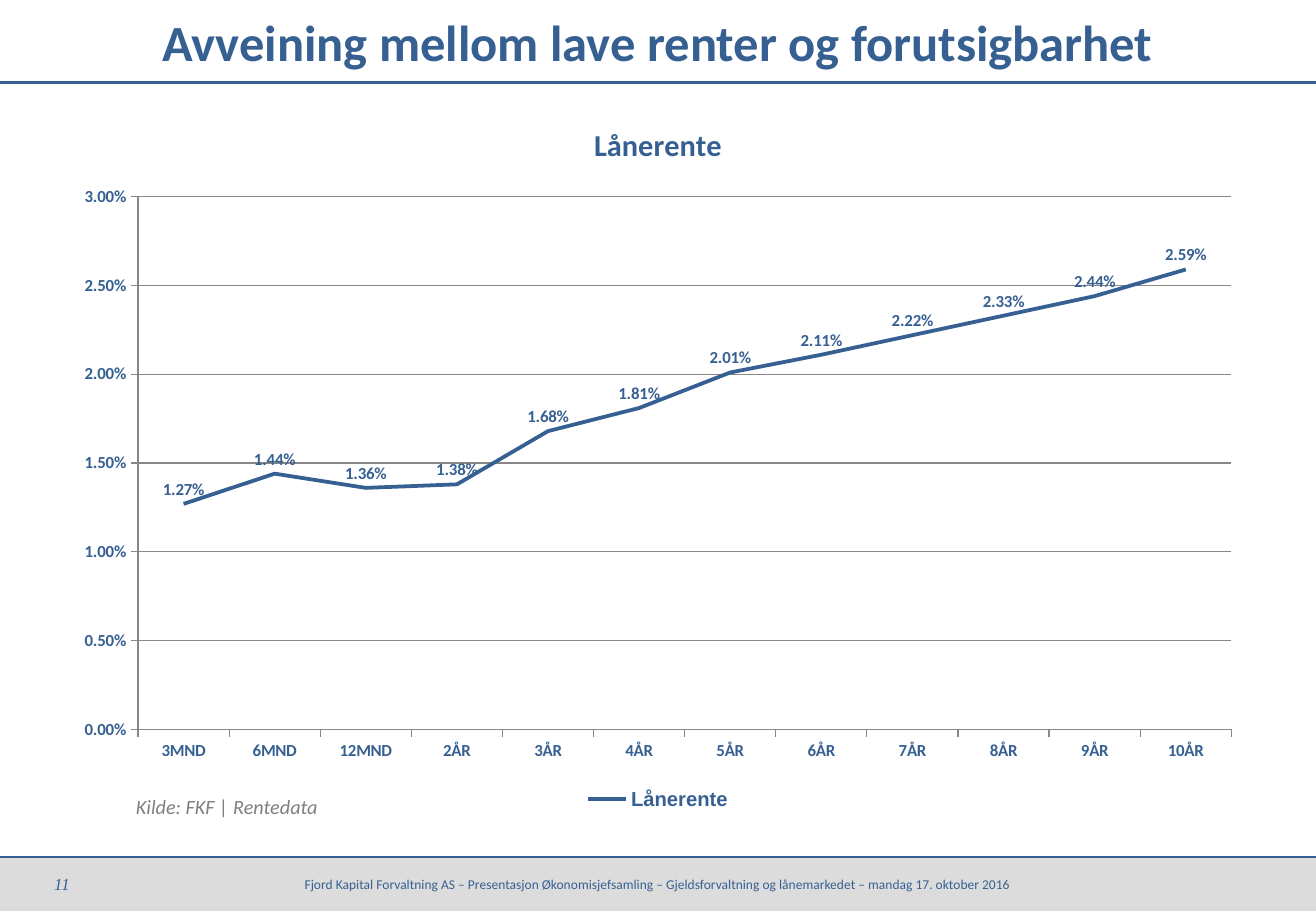
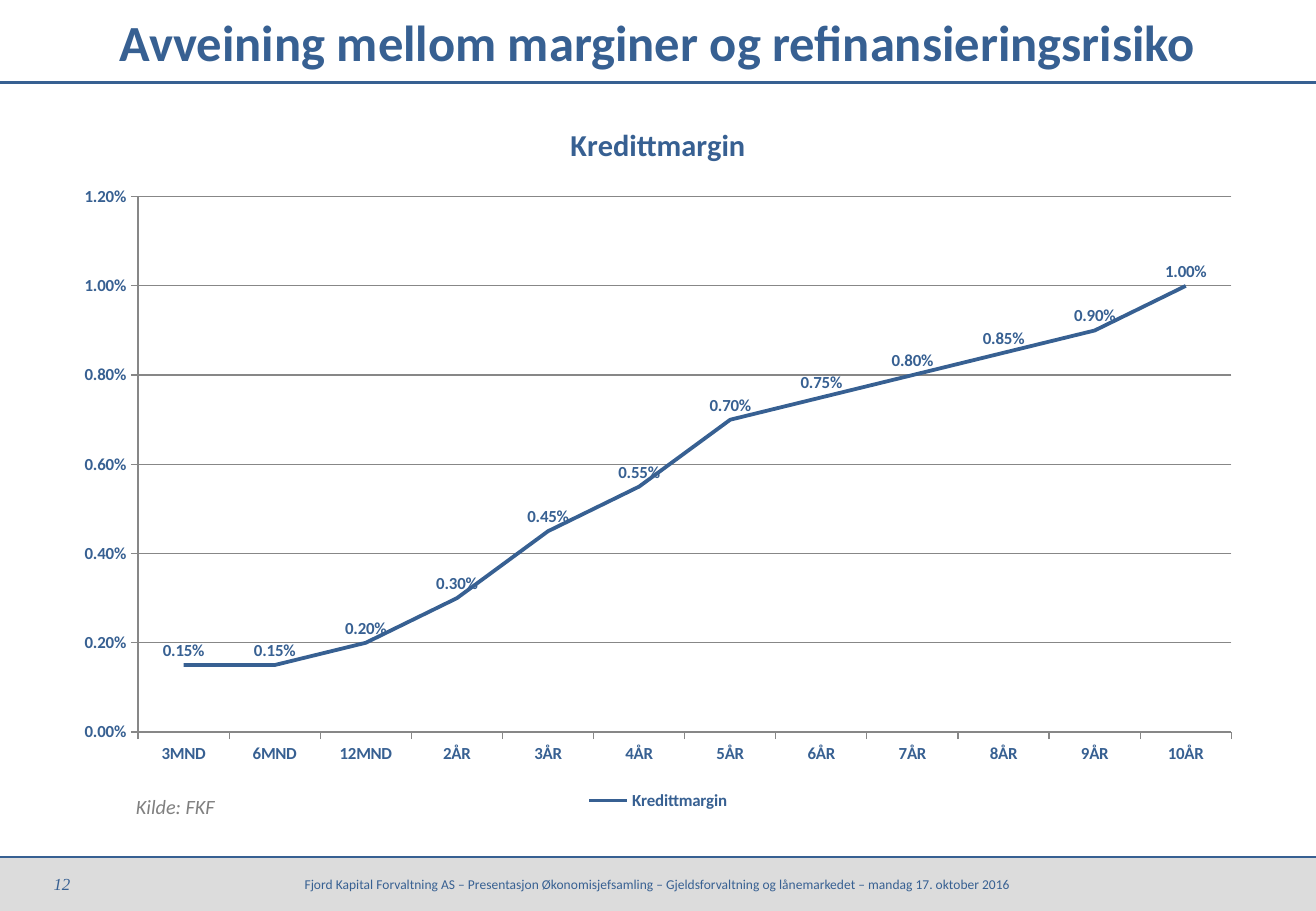
from lxml.etree import SubElement
from pptx import Presentation
from pptx.chart.data import CategoryChartData
from pptx.dml.color import RGBColor
from pptx.enum.chart import (XL_CHART_TYPE, XL_LABEL_POSITION, XL_LEGEND_POSITION,
                             XL_MARKER_STYLE, XL_TICK_LABEL_POSITION, XL_TICK_MARK)
from pptx.enum.shapes import MSO_CONNECTOR, MSO_SHAPE
from pptx.enum.text import MSO_ANCHOR, PP_ALIGN
from pptx.oxml.ns import qn
from pptx.util import Pt

BLUE = RGBColor(0x37, 0x60, 0x92)
BAND_GRAY = RGBColor(0xA6, 0xA6, 0xA6)
SOURCE_GRAY = RGBColor(0x80, 0x80, 0x80)
GRID_GRAY = RGBColor(0x87, 0x87, 0x87)

WIDTH, HEIGHT = 780, 540
TITLE_HEIGHT = 49
FOOTER_TOP = 508
FOOTER_HEIGHT = HEIGHT - FOOTER_TOP
MARGIN = 73.5
PERCENT = "0.00%"
FOOTER = ("Fjord Kapital Forvaltning AS – Presentasjon Økonomisjefsamling – "
          "Gjeldsforvaltning og lånemarkedet – mandag 17. oktober 2016")
TERMS = ["3MND", "6MND", "12MND"] + [f"{year}ÅR" for year in range(2, 11)]


def style_font(font, size, name="Calibri", color=BLUE, bold=False, italic=False):
    font.size, font.name = Pt(size), name
    font.bold, font.italic = bold, italic
    font.color.rgb = color


def write(tf, text, align=PP_ALIGN.CENTER, wrap=True, **font):
    tf.word_wrap = wrap
    tf.vertical_anchor = MSO_ANCHOR.MIDDLE
    p = tf.paragraphs[0]
    p.alignment = align
    r = p.add_run()
    r.text = text
    style_font(r.font, **font)


def add_text(s, left, top, width, height, text, **fmt):
    box = s.shapes.add_textbox(Pt(left), Pt(top), Pt(width), Pt(height))
    write(box.text_frame, text, **fmt)


def add_rule(s, y):
    """Draw a blue line across the whole slide."""
    line = s.shapes.add_connector(MSO_CONNECTOR.STRAIGHT, Pt(0), Pt(y), Pt(WIDTH), Pt(y))
    line.line.color.rgb = BLUE
    line.line.width = Pt(1.5)
    SubElement(line._element.spPr, qn("a:effectLst"))


def add_footer_band(s):
    band = s.shapes.add_shape(MSO_SHAPE.RECTANGLE, Pt(0), Pt(FOOTER_TOP),
                              Pt(WIDTH), Pt(FOOTER_HEIGHT))
    band.shadow.inherit = False
    band.line.fill.background()
    band.fill.solid()
    band.fill.fore_color.rgb = BAND_GRAY
    color = band._element.spPr.find(qn("a:solidFill"))[0]
    SubElement(color, qn("a:alpha"), val="39000")
    write(band.text_frame, FOOTER, size=8)


def add_frame(prs, title, number):
    """Add a slide with the shared title, rules and footer."""
    s = prs.slides.add_slide(prs.slide_layouts[6])
    add_footer_band(s)
    for y in (TITLE_HEIGHT, FOOTER_TOP):
        add_rule(s, y)
    add_text(s, 0, FOOTER_TOP, MARGIN, FOOTER_HEIGHT, str(number),
             size=10, name="Times New Roman", italic=True)
    add_text(s, 0, 0, WIDTH, TITLE_HEIGHT, title, size=30, bold=True)
    return s


def style_axis(axis):
    axis.major_tick_mark = XL_TICK_MARK.OUTSIDE
    axis.minor_tick_mark = XL_TICK_MARK.NONE
    axis.format.line.color.rgb = GRID_GRAY
    axis.format.line.width = Pt(0.75)
    style_font(axis.tick_labels.font, 10, bold=True)


def style_series(series):
    series.smooth = False
    series.marker.style = XL_MARKER_STYLE.NONE
    series.format.line.color.rgb = BLUE
    series.format.line.width = Pt(2.25)
    labels = series.data_labels
    labels.show_value = True
    labels.position = XL_LABEL_POSITION.ABOVE
    labels.number_format = PERCENT
    labels.number_format_is_linked = False
    style_font(labels.font, 10, bold=True)


def add_line_chart(s, name, values, top_value, step, legend_font):
    data = CategoryChartData(number_format=PERCENT)
    data.categories = TERMS
    data.add_series(name, values)
    chart = s.shapes.add_chart(XL_CHART_TYPE.LINE, Pt(36), Pt(57.5),
                               Pt(708), Pt(425.5), data).chart
    style_font(chart.font, 10)
    chart.has_title = True
    write(chart.chart_title.text_frame, name, size=18, bold=True)
    chart.has_legend = True
    chart.legend.position = XL_LEGEND_POSITION.BOTTOM
    chart.legend.include_in_layout = False
    style_font(chart.legend.font, bold=True, **legend_font)

    plot = chart.plots[0]
    plot.vary_by_categories = False
    style_series(plot.series[0])

    for axis in (chart.category_axis, chart.value_axis):
        style_axis(axis)
    chart.category_axis.tick_label_position = XL_TICK_LABEL_POSITION.LOW
    value_axis = chart.value_axis
    value_axis.minimum_scale, value_axis.maximum_scale = 0, top_value
    value_axis.major_unit = step
    value_axis.tick_labels.number_format = PERCENT
    value_axis.tick_labels.number_format_is_linked = False
    grid = value_axis.major_gridlines.format.line
    grid.color.rgb = GRID_GRAY
    grid.width = Pt(0.75)


def add_chart_slide(prs, number, title, source, **chart):
    s = add_frame(prs, title, number)
    add_line_chart(s, **chart)
    add_text(s, MARGIN, 464.5, 136, 26.5, source, align=PP_ALIGN.LEFT, wrap=False,
             size=12, color=SOURCE_GRAY, italic=True)


def main():
    prs = Presentation()
    prs.slide_width, prs.slide_height = Pt(WIDTH), Pt(HEIGHT)
    add_chart_slide(
        prs, 11, "Avveining mellom lave renter og forutsigbarhet",
        "Kilde: FKF | Rentedata", name="Lånerente",
        values=[0.0127, 0.0144, 0.0136, 0.0138, 0.0168, 0.0181,
                0.0201, 0.0211, 0.0222, 0.0233, 0.0244, 0.0259],
        top_value=0.03, step=0.005, legend_font={"size": 12, "name": "Arial"})
    add_chart_slide(
        prs, 12, "Avveining mellom marginer og refinansieringsrisiko",
        "Kilde: FKF", name="Kredittmargin",
        values=[0.0015, 0.0015, 0.002, 0.003, 0.0045, 0.0055,
                0.007, 0.0075, 0.008, 0.0085, 0.009, 0.01],
        top_value=0.012, step=0.002, legend_font={"size": 10})
    prs.save("out.pptx")


if __name__ == "__main__":
    main()
